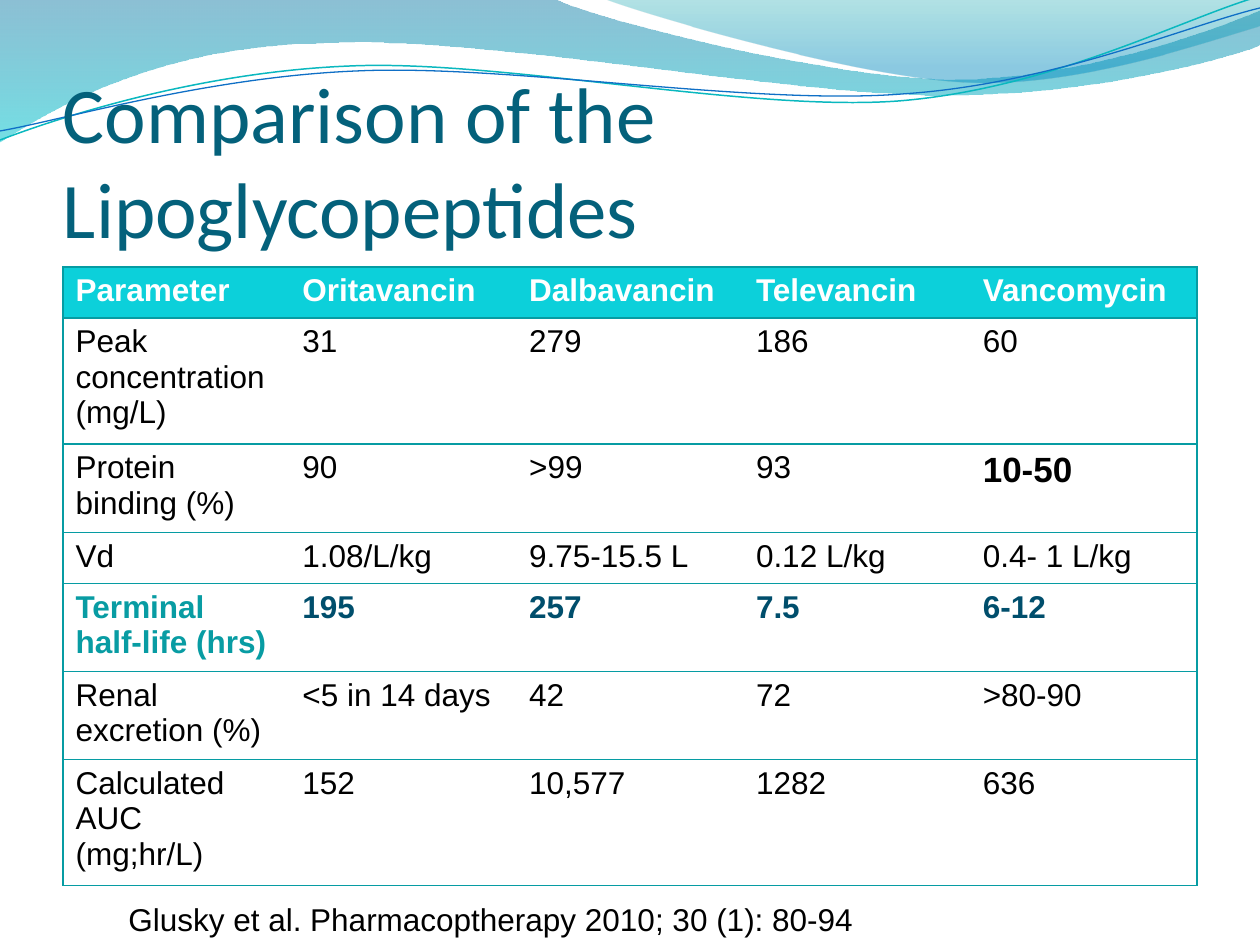
from dataclasses import dataclass
from typing import Optional

from lxml import etree
from pptx import Presentation
from pptx import util as u
from pptx.dml.color import RGBColor
from pptx.enum import text
from pptx.oxml import ns

PX = u.Inches(1) / 126
MIN_ROW = 51
TEAL = RGBColor(0x06, 0x9C, 0xA3)
HEADER = RGBColor(0x0C, 0xD0, 0xDA)
TITLE = RGBColor(0x04, 0x61, 0x7B)
WHITE = RGBColor(0xFF, 0xFF, 0xFF)
BLACK = RGBColor(0, 0, 0)
HIGHLIGHT = RGBColor(0x08, 0x9C, 0xA3)
NAVY = RGBColor(0x00, 0x4E, 0x6C)
DEEP_BLUE = RGBColor(0x00, 0x74, 0xA1)
CYAN = RGBColor(0x00, 0xC6, 0xCF)
SEA = RGBColor(0x00, 0xA1, 0xA9)
SKY = RGBColor(0x00, 0x8B, 0xBF)
LINE_TEAL = RGBColor(0x0A, 0xB8, 0xBF)
LINE_BLUE = RGBColor(0x0F, 0x6F, 0xC6)

Point = tuple[int, int]


@dataclass
class Stop:
    position: float
    color: RGBColor
    opacity: int


@dataclass
class Wave:
    start: Point
    segments: list[tuple[Point, ...]]
    stops: tuple[Stop, ...] = ()
    line: Optional[RGBColor] = None
    width: float = 0


@dataclass
class Row:
    cells: tuple[str, ...]
    color: RGBColor = BLACK
    label_color: RGBColor = BLACK
    bold: bool = False


WAVES = [
    Wave((0, 0), [((554, -1),),
                  ((600, 21), (837, 79), (955, 79)),
                  ((1075, 79), (1207, 33), (1260, 11)),
                  ((1261, 45),),
                  ((1239, 55), (1096, 96), (940, 95)),
                  ((784, 95), (481, 35), (324, 43)),
                  ((163, 45), (58, 105), (-1, 142)),
                  ((0, 0),)],
         stops=(Stop(0, DEEP_BLUE, 45), Stop(1, CYAN, 55))),
    Wave((604, -1), [((641, 14), (859, 78), (969, 82)),
                     ((1079, 87), (1211, 40), (1260, 26)),
                     ((1260, 0),),
                     ((604, -1),)],
         stops=(Stop(0, SEA, 30), Stop(0.8, SKY, 45))),
    Wave((0, 140), [((60, 117), (199, 72), (349, 66)),
                    ((498, 59), (747, 112), (898, 101)),
                    ((1050, 89), (1182, 19), (1257, -3))],
         line=LINE_TEAL, width=0.85),
    Wave((0, 131), [((59, 121), (207, 77), (357, 71)),
                    ((508, 64), (752, 106), (903, 94)),
                    ((1053, 84), (1186, 26), (1260, 8))],
         line=LINE_BLUE, width=0.75),
]

ROWS = [
    Row(("Parameter", "Oritavancin", "Dalbavancin", "Televancin", "Vancomycin"),
        WHITE, WHITE, True),
    Row(("Peak concentration (mg/L)", "31", "279", "186", "60")),
    Row(("Protein binding (%)", "90", ">99", "93", "10-50")),
    Row(("Vd", "1.08/L/kg", "9.75-15.5 L", "0.12 L/kg", "0.4- 1 L/kg")),
    Row(("Terminal half-life (hrs)", "195", "257", "7.5", "6-12"),
        NAVY, HIGHLIGHT, True),
    Row(("Renal excretion (%)", "<5 in 14 days", "42", "72", ">80-90")),
    Row(("Calculated AUC (mg;hr/L)", "152", "10,577", "1282", "636")),
]


def px(length: float) -> int:
    return round(length * PX)


def bend(shape, wave: Wave, anchors: list[Point]) -> None:
    left = min(x for x, _ in anchors)
    top = min(y for _, y in anchors)
    lines = list(shape.element.spPr.iter(ns.qn("a:lnTo")))
    for line, segment in zip(lines, wave.segments):
        if len(segment) == 3:
            line.tag = ns.qn("a:cubicBezTo")
            for index, (x, y) in enumerate(segment[:2]):
                line.insert(index, etree.Element(ns.qn("a:pt"), x=str(x - left),
                                                 y=str(y - top)))


def draw_wave(page, wave: Wave) -> None:
    anchors = [segment[-1] for segment in wave.segments]
    builder = page.shapes.build_freeform(*wave.start, scale=PX)
    builder.add_line_segments(anchors, close=bool(wave.stops))
    shape = builder.convert_to_shape()
    bend(shape, wave, [wave.start, *anchors])
    shape.shadow.inherit = False
    if wave.line is not None:
        shape.fill.background()
        shape.line.color.rgb = wave.line
        shape.line.width = u.Pt(wave.width)
        return
    shape.line.fill.background()
    shape.fill.gradient()
    shape.fill.gradient_angle = 270
    for target, stop in zip(shape.fill.gradient_stops, wave.stops):
        target.position = stop.position
        target.color.rgb = stop.color
    colors = shape.element.spPr.iterfind(".//" + ns.qn("a:gs") + "/" + ns.qn("a:srgbClr"))
    for color, stop in zip(colors, wave.stops):
        etree.SubElement(color, ns.qn("a:alpha"), val=str(stop.opacity * 1000))


def set_font(para, name: str, size: int, color: RGBColor, bold: bool = False) -> None:
    para.font.name = name
    para.font.size = u.Pt(size)
    para.font.bold = bold
    para.font.color.rgb = color


def add_text(page, area: tuple[int, int, int, int], words: str,
             name: str, size: int, color: RGBColor, wrap: bool):
    box = page.shapes.add_textbox(*map(px, area))
    frame = box.text_frame
    frame.word_wrap = wrap
    frame.text = words
    set_font(frame.paragraphs[0], name, size, color)
    return frame


def set_borders(cell, visible: dict[str, bool]) -> None:
    properties = cell._tc.get_or_add_tcPr()
    for index, (side, shown) in enumerate(visible.items()):
        border = etree.Element(ns.qn("a:ln" + side), w=str(u.Pt(0.75)))
        if shown:
            fill = etree.SubElement(border, ns.qn("a:solidFill"))
            etree.SubElement(fill, ns.qn("a:srgbClr"), val=str(TEAL))
        else:
            etree.SubElement(border, ns.qn("a:noFill"))
        properties.insert(index, border)


def draw_table(page, rows: list[Row]) -> None:
    columns = len(rows[0].cells)
    table = page.shapes.add_table(len(rows), columns, px(63), px(267),
                                  px(1134), px(MIN_ROW * len(rows))).table
    table.horz_banding = False
    table.first_row = False
    for r, row in enumerate(rows):
        for c, words in enumerate(row.cells):
            cell = table.cell(r, c)
            cell.text = words
            emphasis = words == "10-50"
            set_font(cell.text_frame.paragraphs[0], "Arial", 20 if emphasis else 18,
                     row.color if c else row.label_color, row.bold or emphasis)
            if r == 0:
                cell.fill.solid()
                cell.fill.fore_color.rgb = HEADER
            else:
                cell.fill.background()
            set_borders(cell, {"L": c == 0, "R": c == columns - 1, "T": True, "B": True})


def main() -> None:
    deck = Presentation()
    deck.slide_width, deck.slide_height = px(1260), px(945)
    page = deck.slides.add_slide(deck.slide_layouts[6])
    for wave in WAVES:
        draw_wave(page, wave)
    title = add_text(page, (63, 97, 1134, 157), "Comparison of the Lipoglycopeptides",
                     "Calibri", 45, TITLE, True)
    title.vertical_anchor = text.MSO_ANCHOR.BOTTOM
    title.margin_left = title.margin_right = title.margin_bottom = 0
    draw_table(page, ROWS)
    add_text(page, (116, 894, 757, 50),
             "Glusky et al. Pharmacoptherapy 2010; 30 (1): 80-94", "Arial", 18, BLACK, False)
    deck.save("out.pptx")


if __name__ == "__main__":
    main()
